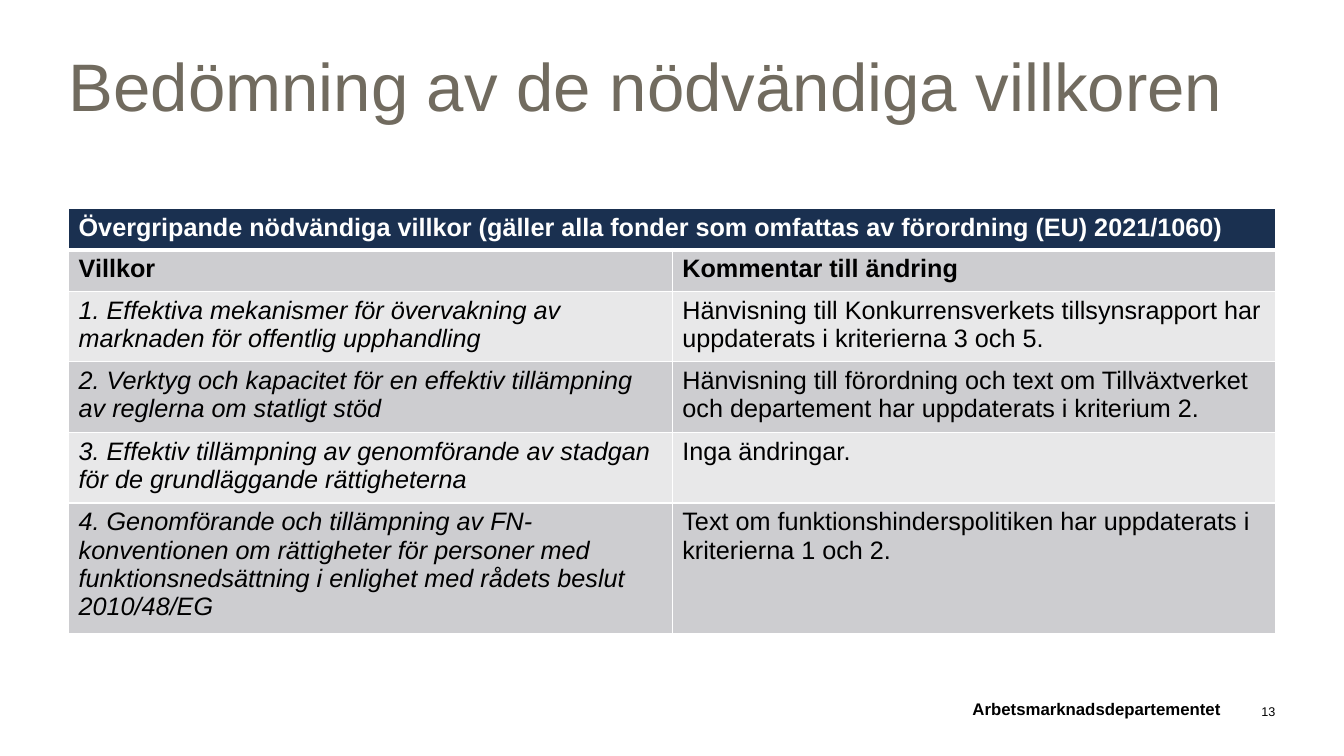
from lxml.etree import SubElement
from pptx import Presentation
from pptx.dml.color import RGBColor
from pptx.enum.text import MSO_ANCHOR as Anchor, PP_ALIGN as Align
from pptx.oxml.ns import qn
from pptx.util import Pt

WHITE, BLACK, NAVY, TAUPE = "FFFFFF", "000000", "1A3050", "716B5F"
BANDS = ["CDCDD0", "E8E8E9"]
LEFT, WIDTH = 49, 862.5
FOOTER_TOP, FOOTER_HEIGHT = 496, 17.5

HEADING = "Övergripande nödvändiga villkor (gäller alla fonder som omfattas av förordning (EU) 2021/1060)"
CONDITIONS = [
    ("Villkor", "Kommentar till ändring"),
    ("1. Effektiva mekanismer för övervakning av marknaden för offentlig upphandling",
     "Hänvisning till Konkurrensverkets tillsynsrapport har uppdaterats i kriterierna 3 och 5."),
    ("2. Verktyg och kapacitet för en effektiv tillämpning av reglerna om statligt stöd",
     "Hänvisning till förordning och text om Tillväxtverket och departement har uppdaterats i kriterium 2."),
    ("3. Effektiv tillämpning av genomförande av stadgan för de grundläggande rättigheterna",
     "Inga ändringar."),
    ("4. Genomförande och tillämpning av FN-konventionen om rättigheter för personer med "
     "funktionsnedsättning i enlighet med rådets beslut 2010/48/EG",
     "Text om funktionshinderspolitiken har uppdaterats i kriterierna 1 och 2."),
]
ROW_HEIGHTS = [29.5, 29.5, 47.5, 47.5, 47.5, 87.5]


def color(hex_string):
    return RGBColor.from_string(hex_string)


def write(frame, text, size=18, fill=BLACK, bold=False, italic=False, align=Align.LEFT):
    """Put one formatted paragraph in a text frame."""
    para = frame.paragraphs[0]
    para.alignment = align
    span = para.add_run()
    span.text = text
    font = span.font
    font.name, font.size, font.bold, font.italic = "Arial", Pt(size), bold, italic
    font.color.rgb = color(fill)


def add_text(page, text, left, top, width, height, inset=0, anchor=Anchor.TOP, **style):
    box = page.shapes.add_textbox(Pt(left), Pt(top), Pt(width), Pt(height))
    frame = box.text_frame
    frame.word_wrap = True
    frame.vertical_anchor = anchor
    frame.margin_left = frame.margin_right = 0
    frame.margin_top = frame.margin_bottom = Pt(inset)
    write(frame, text, **style)


def set_borders(cell, top=1, bottom=1):
    """Draw white lines on the four sides of a cell."""
    properties = cell._tc.get_or_add_tcPr()
    widths = {"a:lnL": 1, "a:lnR": 1, "a:lnT": top, "a:lnB": bottom}
    for index, (tag, width) in enumerate(widths.items()):
        line = SubElement(properties, qn(tag), w=str(Pt(width)))
        SubElement(SubElement(line, qn("a:solidFill")), qn("a:srgbClr"), val=WHITE)
        properties.insert(index, line)


def fill_cell(cell, fill, top=1, bottom=1):
    cell.fill.solid()
    cell.fill.fore_color.rgb = color(fill)
    set_borders(cell, top, bottom)


def add_conditions(page):
    table = page.shapes.add_table(len(ROW_HEIGHTS), 2, Pt(LEFT), Pt(149),
                                  Pt(WIDTH), Pt(sum(ROW_HEIGHTS))).table
    for row, height in zip(table.rows, ROW_HEIGHTS):
        row.height = Pt(height)

    # Heading across both columns
    table.cell(0, 0).merge(table.cell(0, 1))
    for column in range(2):
        fill_cell(table.cell(0, column), NAVY, bottom=3)
    write(table.cell(0, 0).text_frame, HEADING, fill=WHITE, bold=True)

    # Column titles, then banded rows
    for index, texts in enumerate(CONDITIONS):
        is_title = index == 0
        for column, text in enumerate(texts):
            cell = table.cell(index + 1, column)
            fill_cell(cell, BANDS[index % 2], top=3 if is_title else 1)
            write(cell.text_frame, text, bold=is_title,
                  italic=column == 0 and not is_title)


def main():
    deck = Presentation()
    deck.slide_width, deck.slide_height = Pt(960), Pt(540)
    page = deck.slides.add_slide(deck.slide_layouts[6])

    # Title
    add_text(page, "Bedömning av de nödvändiga villkoren", LEFT, 28, WIDTH, 81.5,
             inset=3.6, size=48, fill=TAUPE)

    # Table
    add_conditions(page)

    # Footer
    add_text(page, "Arbetsmarknadsdepartementet", 237, FOOTER_TOP, 635, FOOTER_HEIGHT,
             anchor=Anchor.BOTTOM, size=12, bold=True, align=Align.RIGHT)
    add_text(page, "13", 872.5, FOOTER_TOP, 38.5, FOOTER_HEIGHT,
             anchor=Anchor.BOTTOM, size=9, align=Align.RIGHT)

    deck.save("out.pptx")


if __name__ == "__main__":
    main()
